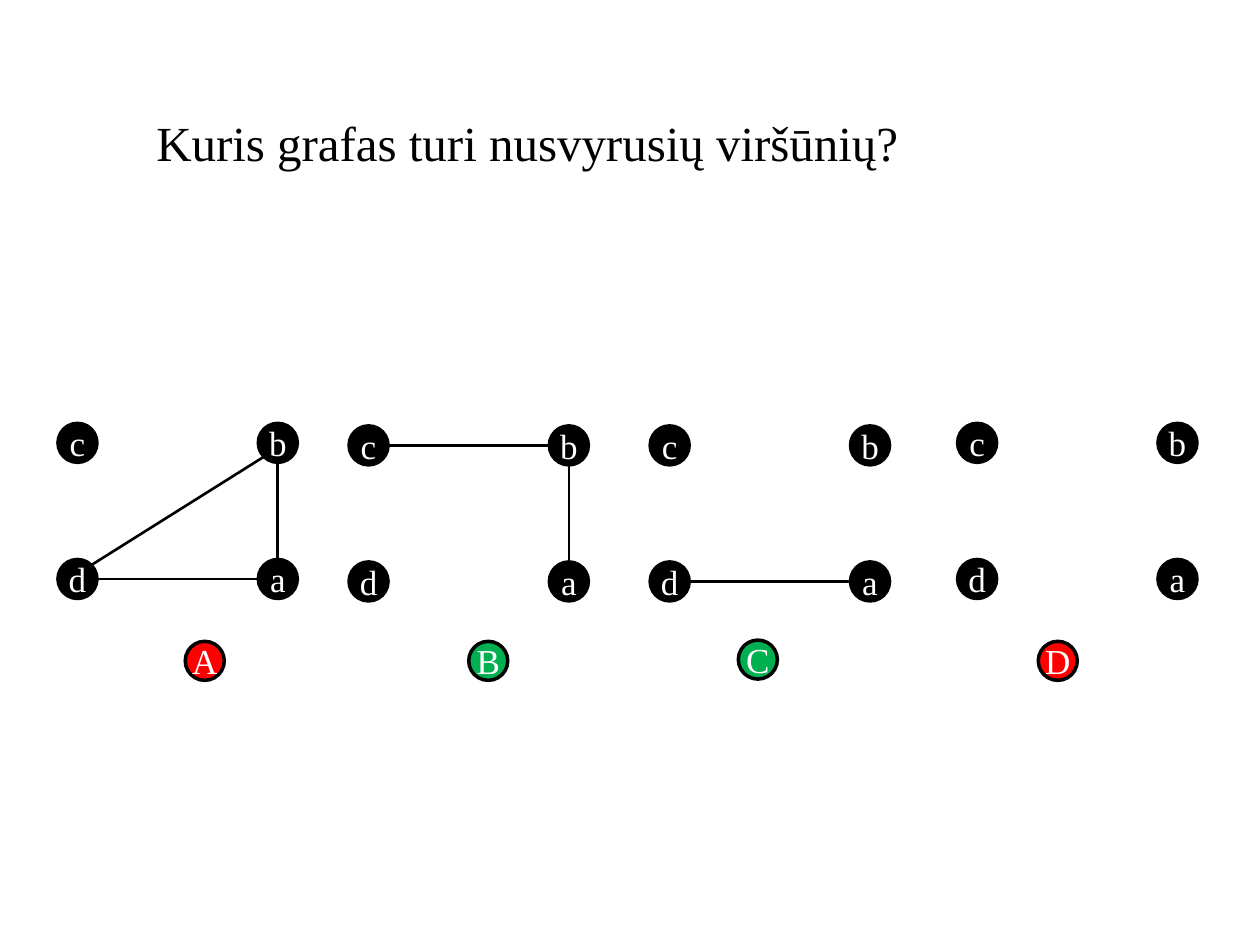
"""Build a quiz slide asking which graphs have pendant vertices."""
from math import hypot

from lxml import etree
from pptx import Presentation
from pptx.dml.color import RGBColor
from pptx.enum.shapes import MSO_CONNECTOR, MSO_SHAPE
from pptx.enum.text import MSO_ANCHOR, MSO_AUTO_SIZE, PP_ALIGN
from pptx.oxml.ns import qn
from pptx.util import Inches, Pt

ELLIPSE = MSO_SHAPE.OVAL
STRAIGHT = MSO_CONNECTOR.STRAIGHT
LEFT, CENTER = PP_ALIGN.LEFT, PP_ALIGN.CENTER
TOP, MIDDLE = MSO_ANCHOR.TOP, MSO_ANCHOR.MIDDLE
GROW = MSO_AUTO_SIZE.SHAPE_TO_FIT_TEXT

QUESTION = "Kuris grafas turi nusvyrusių viršūnių?"
GRAPHS = [
    {"origin": (0.46, 3.36), "edges": ["da", "db", "ba"],
     "answer": "A", "answer_at": (1.47, 5.09), "color": "wrong"},
    {"origin": (2.77, 3.38), "edges": ["cb", "ba"],
     "answer": "B", "answer_at": (3.72, 5.09), "color": "right"},
    {"origin": (5.16, 3.38), "edges": ["da"],
     "answer": "C", "answer_at": (5.86, 5.08), "color": "right"},
    {"origin": (7.6, 3.36), "edges": [],
     "answer": "D", "answer_at": (8.24, 5.09), "color": "wrong"},
]
VERTICES = {"c": (0, 0), "b": (1, 0), "d": (0, 1), "a": (1, 1)}
COLUMN_STEP, ROW_STEP, DIAMETER = 1.59, 1.08, 0.31

THEME = {
    "font": "Times New Roman",
    "title_size": 28, "label_size": 20,
    "outline": 2, "edge": 1.5,
    "ink": RGBColor.from_string("000000"),
    "label": RGBColor.from_string("FFFFFF"),
    "right": RGBColor.from_string("00B050"),
    "wrong": RGBColor.from_string("FF0000"),
}


def write(holder, text, size, color, align=CENTER, anchor=MIDDLE,
          wrap=False, side_margin=0, end_margin=0):
    """Put formatted text into a shape."""
    frame = holder.text_frame
    frame.word_wrap = wrap
    frame.vertical_anchor = anchor
    frame.margin_left = frame.margin_right = Inches(side_margin)
    frame.margin_top = frame.margin_bottom = Inches(end_margin)
    paragraph = frame.paragraphs[0]
    paragraph.alignment = align
    run = paragraph.add_run()
    run.text = text
    run.font.name = THEME["font"]
    run.font.size = Pt(THEME[size])
    run.font.color.rgb = THEME[color]


def add_circle(shapes, label, position, fill):
    """Draw a circle with its label centred inside."""
    left, top = position
    circle = shapes.add_shape(ELLIPSE, Inches(left), Inches(top),
                              Inches(DIAMETER), Inches(DIAMETER))
    circle.shadow.inherit = False
    circle.fill.solid()
    circle.fill.fore_color.rgb = THEME[fill]
    circle.line.color.rgb = THEME["ink"]
    circle.line.width = Pt(THEME["outline"])
    write(circle, label, size="label_size", color="label")


def rim_point(vertex, toward):
    """Return the point of a vertex's rim, in steps of 45 degrees, facing another."""
    steps = [(b > a) - (b < a) for a, b in zip(vertex, toward)]
    radius = DIAMETER / 2
    return [Inches(corner + radius + radius * step / hypot(*steps))
            for corner, step in zip(vertex, steps)]


def add_edge(shapes, start, end):
    """Draw an edge between the rims of two vertices."""
    edge = shapes.add_connector(STRAIGHT, *rim_point(start, end), *rim_point(end, start))
    edge.line.color.rgb = THEME["ink"]
    edge.line.width = Pt(THEME["edge"])
    etree.SubElement(edge._element.spPr, qn("a:effectLst"))


def add_graph(slide, origin, edges):
    """Draw one graph as a group of vertices and edges."""
    shapes = slide.shapes.add_group_shape().shapes
    left, top = origin
    positions = {name: (left + column * COLUMN_STEP, top + row * ROW_STEP)
                 for name, (column, row) in VERTICES.items()}
    for name, position in positions.items():
        add_circle(shapes, name, position, fill="ink")
    for start, end in edges:
        add_edge(shapes, positions[start], positions[end])


def main():
    """Build and save the slide."""
    deck = Presentation()
    deck.slide_width, deck.slide_height = Inches(10), Inches(7.5)
    slide = deck.slides.add_slide(deck.slide_layouts[5])

    question = slide.shapes.title
    question.left, question.top = Inches(1.14), Inches(0.84)
    question.width, question.height = Inches(7.53), Inches(0.57)
    question.text_frame.auto_size = GROW
    write(question, QUESTION, size="title_size", color="ink", align=LEFT, anchor=TOP,
          wrap=True, side_margin=0.1, end_margin=0.05)

    for graph in GRAPHS:
        add_graph(slide, graph["origin"], graph["edges"])
    for graph in GRAPHS:
        add_circle(slide.shapes, graph["answer"], graph["answer_at"], fill=graph["color"])

    deck.save("out.pptx")


if __name__ == "__main__":
    main()
